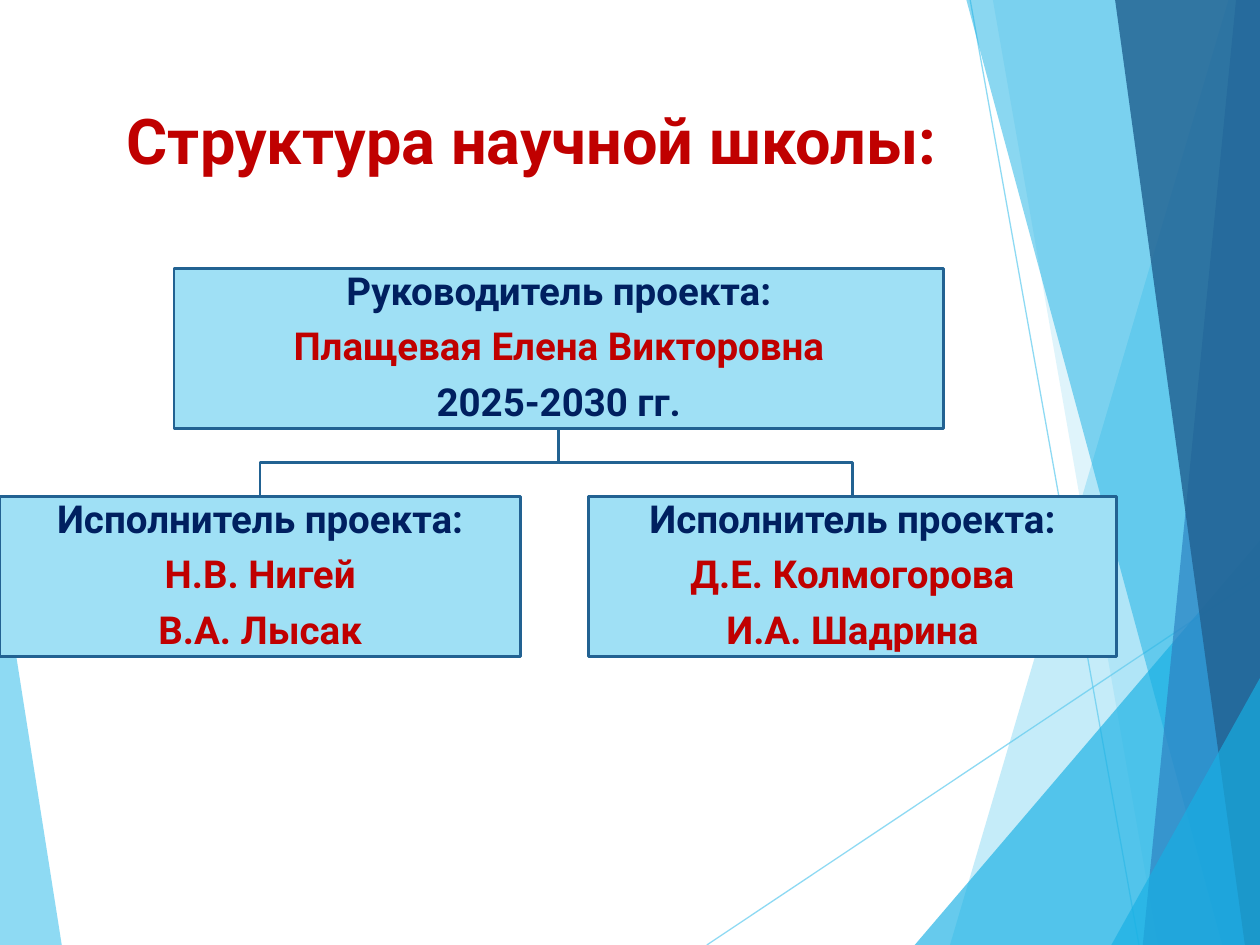
from lxml import etree
from pptx import Presentation
from pptx.dml.color import RGBColor
from pptx.enum.shapes import MSO_CONNECTOR, MSO_SHAPE
from pptx.enum.text import MSO_ANCHOR, PP_ALIGN
from pptx.oxml.ns import qn
from pptx.util import Inches, Pt

SKY = RGBColor(0x5F, 0xCB, 0xEF)
CYAN = RGBColor(0x17, 0xB0, 0xE4)
BLUE = RGBColor(0x2E, 0x83, 0xC3)
DEEP = RGBColor(0x22, 0x62, 0x92)
PALE = RGBColor(0x9F, 0xE0, 0xF5)
NAVY = RGBColor(0x00, 0x20, 0x60)
RED = RGBColor(0xC0, 0x00, 0x00)

W, H = 10, 7.5

# points, colour, opacity in percent
FACETS = [
    ([(0, 4.39), (0.49, H), (0, H)], SKY, 70),
    ([(9.75, 0), (7.54, H), (W, H), (W, 0)], SKY, 36),
    ([(7.88, 0), (9.19, H), (W, H), (W, 0)], SKY, 20),
    ([(7.26, H), (W, 4.29), (W, H)], CYAN, 66),
    ([(7.67, 0), (9.7, H), (W, H), (W, 0)], CYAN, 50),
    ([(9.81, 0), (9.07, H), (W, H), (W, 0)], BLUE, 70),
    ([(8.85, 0), (9.88, H), (W, H), (W, 0)], DEEP, 82),
    ([(8.82, H), (W, 5.38), (W, H)], CYAN, 66),
]
RAYS = [((5.61, H), (W, 4.57)), ((7.7, 0), (9.04, H))]

BOX_H, GAP = 1.27, 0.54
LEADER = (1.38, 6.11, ["Руководитель проекта:", "Плащевая Елена Викторовна",
                       "2025-2030 гг."], [NAVY, RED, NAVY])
TEAMS = [
    (0, 4.13, ["Исполнитель проекта:", "Н.В. Нигей", "В.А. Лысак"],
     [NAVY, RED, RED]),
    (4.67, 4.19, ["Исполнитель проекта:", "Д.Е. Колмогорова", "И.А. Шадрина"],
     [NAVY, RED, RED]),
]


def set_opacity(fill_format, percent):
    color = fill_format._xPr.find(qn("a:solidFill"))[0]
    etree.SubElement(color, qn("a:alpha")).set("val", str(percent * 1000))


def add_path(s, points, close):
    emu = [(Inches(x), Inches(y)) for x, y in points]
    builder = s.shapes.build_freeform(*emu[0], scale=1.0)
    builder.add_line_segments(emu[1:], close=close)
    sp = builder.convert_to_shape()
    sp.shadow.inherit = False
    return sp


def add_facet(s, points, color, opacity):
    sp = add_path(s, points, True)
    sp.fill.solid()
    sp.fill.fore_color.rgb = color
    set_opacity(sp.fill, opacity)
    sp.line.fill.background()


def add_ray(s, start, end):
    line = s.shapes.add_connector(
        MSO_CONNECTOR.STRAIGHT, *(Inches(v) for v in start + end))
    etree.SubElement(line._element.spPr, qn("a:effectLst"))
    line.line.width = Pt(0.75)
    line.line.color.rgb = SKY
    set_opacity(line.line.fill, 70)


def add_backdrop(s):
    add_facet(s, *FACETS[0])
    for ray in RAYS:
        add_ray(s, *ray)
    for facet in FACETS[1:]:
        add_facet(s, *facet)


def style_text(p, text, size, color):
    p.alignment = PP_ALIGN.CENTER
    r = p.add_run()
    r.text = text
    for name, value in dict(name="Roboto", size=Pt(size), bold=True).items():
        setattr(r.font, name, value)
    r.font.color.rgb = color


def add_title(s, x, y, w, h, text):
    tf = s.shapes.add_textbox(*(Inches(v) for v in (x, y, w, h))).text_frame
    tf.word_wrap = True
    style_text(tf.paragraphs[0], text, 36, RED)


def add_box(s, x, y, w, lines, colors):
    sp = s.shapes.add_shape(
        MSO_SHAPE.RECTANGLE, *(Inches(v) for v in (x, y, w, BOX_H)))
    sp.shadow.inherit = False
    sp.fill.solid()
    sp.fill.fore_color.rgb = PALE
    sp.line.color.rgb = DEEP
    sp.line.width = Pt(1.5)
    tf = sp.text_frame
    tf.word_wrap = True
    tf.vertical_anchor = MSO_ANCHOR.MIDDLE
    for side in ("left", "top", "right", "bottom"):
        setattr(tf, f"margin_{side}", Inches(0.02))
    for i, (text, color) in enumerate(zip(lines, colors)):
        p = tf.add_paragraph() if i else tf.paragraphs[0]
        p.line_spacing = 0.9
        p.space_after = Pt(8)
        style_text(p, text, 22, color)


def add_branch(s, x1, x2, y):
    """Draw an elbow line down from (x1, y) to the box centred on x2."""
    mid = y + GAP / 2
    sp = add_path(s, [(x1, y), (x1, mid), (x2, mid), (x2, y + GAP)], False)
    sp.fill.background()
    sp.line.color.rgb = DEEP
    sp.line.width = Pt(1.5)


def add_org_chart(s, y):
    x, w, lines, colors = LEADER
    bottom = y + BOX_H
    for team_x, team_w, *_ in TEAMS:
        add_branch(s, x + w / 2, team_x + team_w / 2, bottom)
    add_box(s, x, y, w, lines, colors)
    for team_x, team_w, *content in TEAMS:
        add_box(s, team_x, bottom + GAP, team_w, *content)


def main():
    prs = Presentation()
    prs.slide_width, prs.slide_height = Inches(W), Inches(H)
    s = prs.slides.add_slide(prs.slide_layouts[6])
    add_backdrop(s)
    add_title(s, 0.75, 0.76, 6.94, 1.44, "Структура научной школы:")
    add_org_chart(s, 2.13)
    prs.save("out.pptx")


if __name__ == "__main__":
    main()
